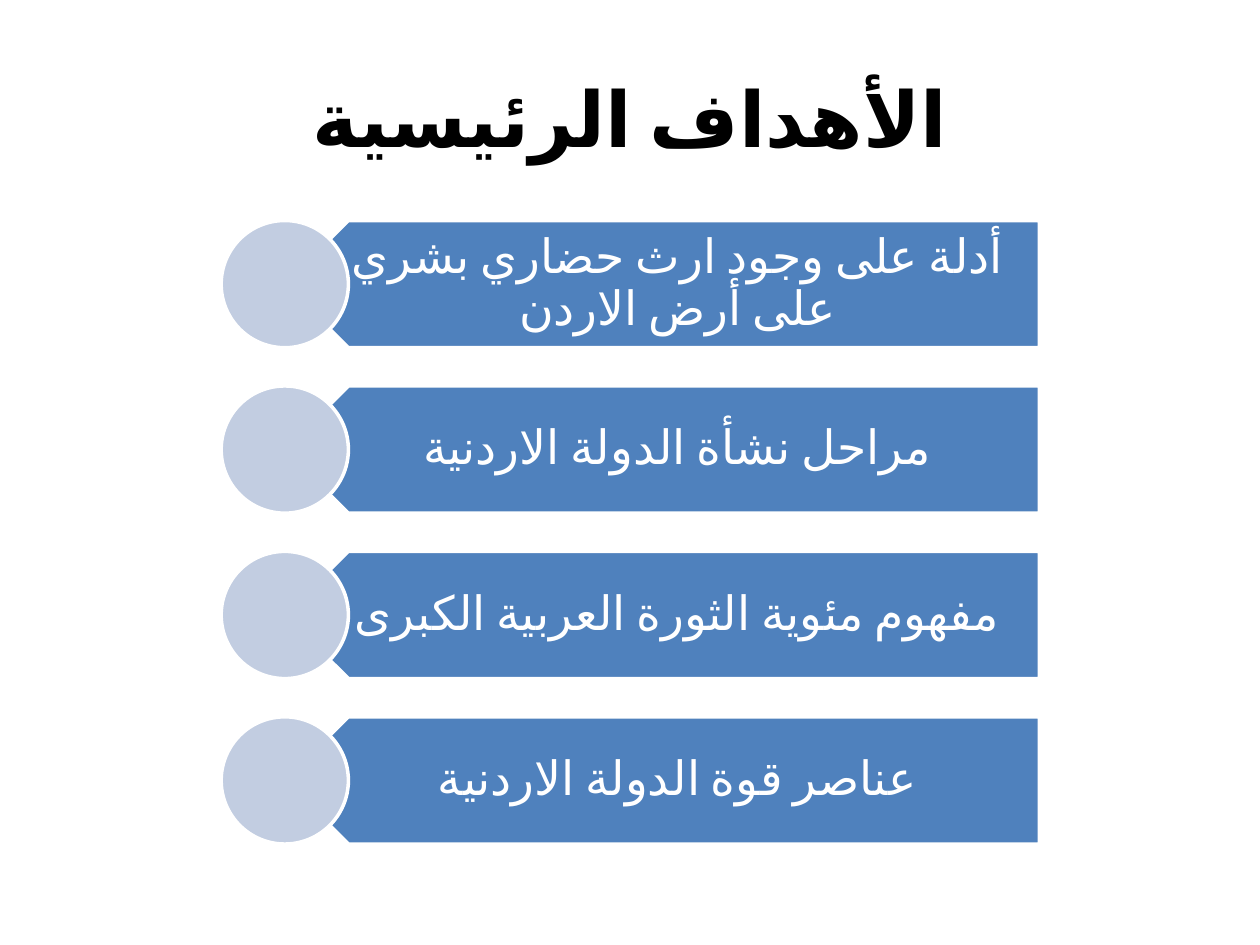
from lxml import etree
from pptx import Presentation
from pptx.dml.color import RGBColor
from pptx.enum import shapes, text
from pptx.oxml.ns import qn
from pptx.util import Inches, Pt

BLUE = RGBColor(0x4F, 0x81, 0xBD)
PALE = RGBColor(0xC2, 0xCD, 0xE1)
WHITE = RGBColor(0xFF, 0xFF, 0xFF)
BLACK = RGBColor(0, 0, 0)

FONT = "Calibri"
GOALS = [
    "أدلة على وجود ارث حضاري بشري على أرض الاردن",
    "مراحل نشأة الدولة الاردنية",
    "مفهوم مئوية الثورة العربية الكبرى",
    "عناصر قوة الدولة الاردنية",
]
TOP, STEP, SIZE = 1.75, 1.313, 1.01
LEFT, WIDTH = 2.26, 5.99


def write(frame, words, size, color, bold):
    frame.word_wrap = True
    frame.vertical_anchor = text.MSO_ANCHOR.MIDDLE
    para = frame.paragraphs[0]
    para.alignment = text.PP_ALIGN.CENTER
    para._p.get_or_add_pPr().set("rtl", "1")
    run = para.add_run()
    run.text = words
    look = {"name": FONT, "size": Pt(size), "bold": bold}
    for key, value in look.items():
        setattr(run.font, key, value)
    run.font.color.rgb = color
    props = run._r.get_or_add_rPr()
    props.set("lang", "ar-JO")
    etree.SubElement(props, qn("a:cs")).set("typeface", FONT)
    return para


def draw(kind, left, top, width, fill):
    shape = slide.shapes.add_shape(
        kind, Inches(left), Inches(top), Inches(width), Inches(SIZE))
    shape.shadow.inherit = False
    shape.fill.solid()
    shape.fill.fore_color.rgb = fill
    shape.line.color.rgb = WHITE
    shape.line.width = Pt(2)
    return shape


deck = Presentation()
deck.slide_width = Inches(10)
deck.slide_height = Inches(7.5)
slide = deck.slides.add_slide(deck.slide_layouts[5])

title = slide.shapes.title
place = {"left": 0.5, "top": 0.3, "width": 9, "height": 1.25}
for key, value in place.items():
    setattr(title, key, Inches(value))
write(title.text_frame, "الأهداف الرئيسية", 44, BLACK, True)

pads = {"margin_left": 0.45, "margin_top": 0.11,
        "margin_right": 0.21, "margin_bottom": 0.11}
for row, goal in enumerate(GOALS):
    top = TOP + row * STEP
    bar = draw(shapes.MSO_SHAPE.PENTAGON, LEFT, top, WIDTH, BLUE)
    bar.rotation = 180
    box = slide.shapes.add_textbox(
        Inches(LEFT), Inches(top), Inches(WIDTH), Inches(SIZE))
    for key, value in pads.items():
        setattr(box.text_frame, key, Inches(value))
    para = write(box.text_frame, goal, 27, WHITE, False)
    para.line_spacing = 0.9
    draw(shapes.MSO_SHAPE.OVAL, LEFT - SIZE / 2, top, SIZE, PALE)

deck.save("out.pptx")
